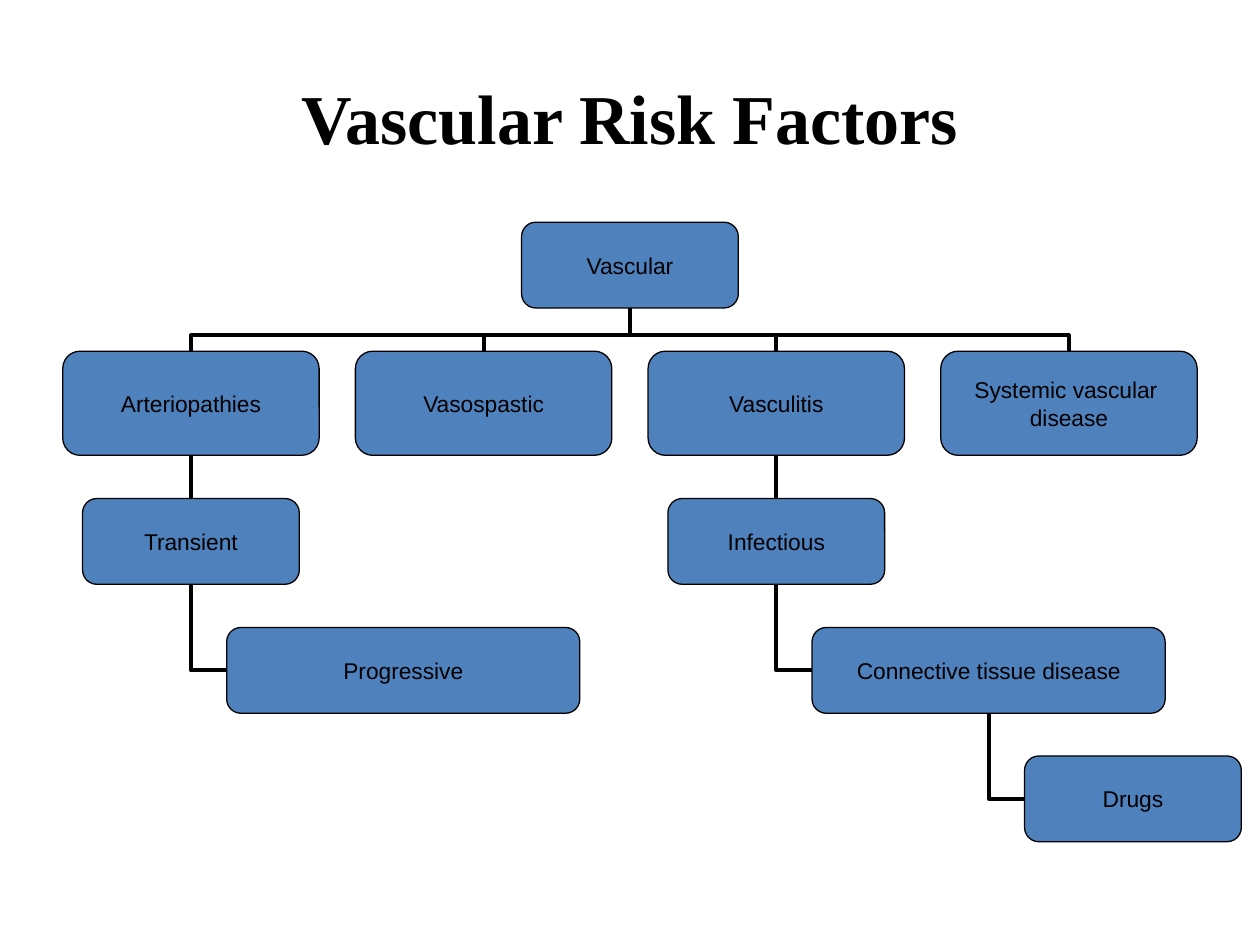
from lxml import etree
from pptx import Presentation
from pptx import util as u
from pptx.dml.color import RGBColor
from pptx.enum import shapes, text
from pptx.oxml import ns

BLACK, BLUE = "000000", "4F81BD"
TOP, LEFT, BOTTOM = 0, 1, 2
SMALL, LARGE, LONG = (4.37, 1.73), (5.17, 2.1), (7.12, 1.73)
FIRST, STEP = 3.85, 5.9
KINDS = ["Arteriopathies", "Vasospastic", "Vasculitis", "Systemic vascular \ndisease"]


def tint(code):
    """Return the colour for a hex string."""
    return RGBColor.from_string(code)


def apply(item, form):
    """Set each value of a format dict on an object."""
    for name, value in form.items():
        setattr(item, name, value)


def write(frame, words, face, size, bold=False):
    """Fill a text frame with centred black text."""
    frame.text = words
    frame.vertical_anchor = text.MSO_ANCHOR.MIDDLE
    for para in frame.paragraphs:
        para.alignment = text.PP_ALIGN.CENTER
        apply(para.font, {"name": face, "size": u.Pt(size), "bold": bold})
        para.font.color.rgb = tint(BLACK)


def title(slide, words):
    """Add the heading of the slide."""
    box = slide.shapes.add_textbox(u.Cm(1.27), u.Cm(0.76), u.Cm(22.86), u.Cm(3.18))
    box.text_frame.word_wrap = True
    write(box.text_frame, words, "Times New Roman", 40, True)


def node(slide, words, mid, top, size):
    """Add a rounded box centred on mid."""
    wide, high = size
    box = slide.shapes.add_shape(
        shapes.MSO_SHAPE.ROUNDED_RECTANGLE,
        u.Cm(mid - wide / 2), u.Cm(top), u.Cm(wide), u.Cm(high))
    box.shadow.inherit = False
    box.fill.solid()
    box.fill.fore_color.rgb = tint(BLUE)
    box.line.color.rgb = tint(BLACK)
    box.line.width = u.Pt(0.75)
    apply(box.text_frame, {
        "margin_left": u.Cm(0.19), "margin_right": u.Cm(0.19),
        "margin_top": u.Cm(0.1), "margin_bottom": u.Cm(0.1),
        "word_wrap": False})
    write(box.text_frame, words, "Arial", 13)
    return box


def link(slide, kind, child, side, parent):
    """Join a side of the child to the foot of its parent, behind the boxes."""
    line = slide.shapes.add_connector(kind, 0, 0, 0, 0)
    line.begin_connect(child, side)
    line.end_connect(parent, BOTTOM)
    line.line.color.rgb = tint(BLACK)
    line.line.width = u.Pt(2.25)
    etree.SubElement(line._element.spPr, ns.qn("a:effectLst"))
    slide.shapes._spTree.insert(3, line._element)
    return line


def turn(line, angle, flip, preset, share=None):
    """Set the turn, flip and bend of an elbow connector."""
    prop = line._element.spPr
    frame, geom = prop.find(ns.qn("a:xfrm")), prop.find(ns.qn("a:prstGeom"))
    for name in ("flipH", "flipV"):
        frame.attrib.pop(name, None)
    frame.set("rot", str(angle * 60000))
    if flip:
        frame.set("flipH", "1")
    geom.set("prst", preset)
    if share is not None:
        guides = geom.get_or_add_avLst()
        etree.SubElement(guides, ns.qn("a:gd"), name="adj1", fmla=f"val {share}")


def fork(slide, child, parent):
    """Link a child below its parent with a shared crossbar."""
    line = link(slide, shapes.MSO_CONNECTOR.ELBOW, child, TOP, parent)
    wide, high = line.width, line.height
    mid, centre = line.left + wide // 2, line.top + high // 2
    apply(line, {"left": mid - high // 2, "top": centre - wide // 2,
                 "width": high, "height": wide})
    right = child.left > parent.left
    turn(line, 90 if right else 270, right, "bentConnector3", 36700)


def hook(slide, child, parent):
    """Link the left side of a child to the foot of its parent."""
    line = link(slide, shapes.MSO_CONNECTOR.ELBOW, child, LEFT, parent)
    turn(line, 180, False, "bentConnector2")


def main():
    """Build and save the slide."""
    deck = Presentation()
    apply(deck, {"slide_width": u.Cm(25.4), "slide_height": u.Cm(19.05)})
    slide = deck.slides.add_slide(deck.slide_layouts[6])
    title(slide, "Vascular Risk Factors")

    root = node(slide, "Vascular", 12.7, 4.48, SMALL)
    mids = [FIRST + STEP * col for col in range(len(KINDS))]
    heads = [node(slide, words, mid, 7.08, LARGE) for words, mid in zip(KINDS, mids)]
    for head in heads:
        fork(slide, head, root)

    for col, upper, lower in [(0, "Transient", "Progressive"),
                              (2, "Infectious", "Connective tissue disease")]:
        stem = node(slide, upper, mids[col], 10.05, SMALL)
        leaf = node(slide, lower, mids[col] + 4.28, 12.65, LONG)
        link(slide, shapes.MSO_CONNECTOR.STRAIGHT, stem, TOP, heads[col])
        hook(slide, leaf, stem)

    hook(slide, node(slide, "Drugs", 22.84, 15.24, SMALL), leaf)
    deck.save("out.pptx")


if __name__ == "__main__":
    main()
